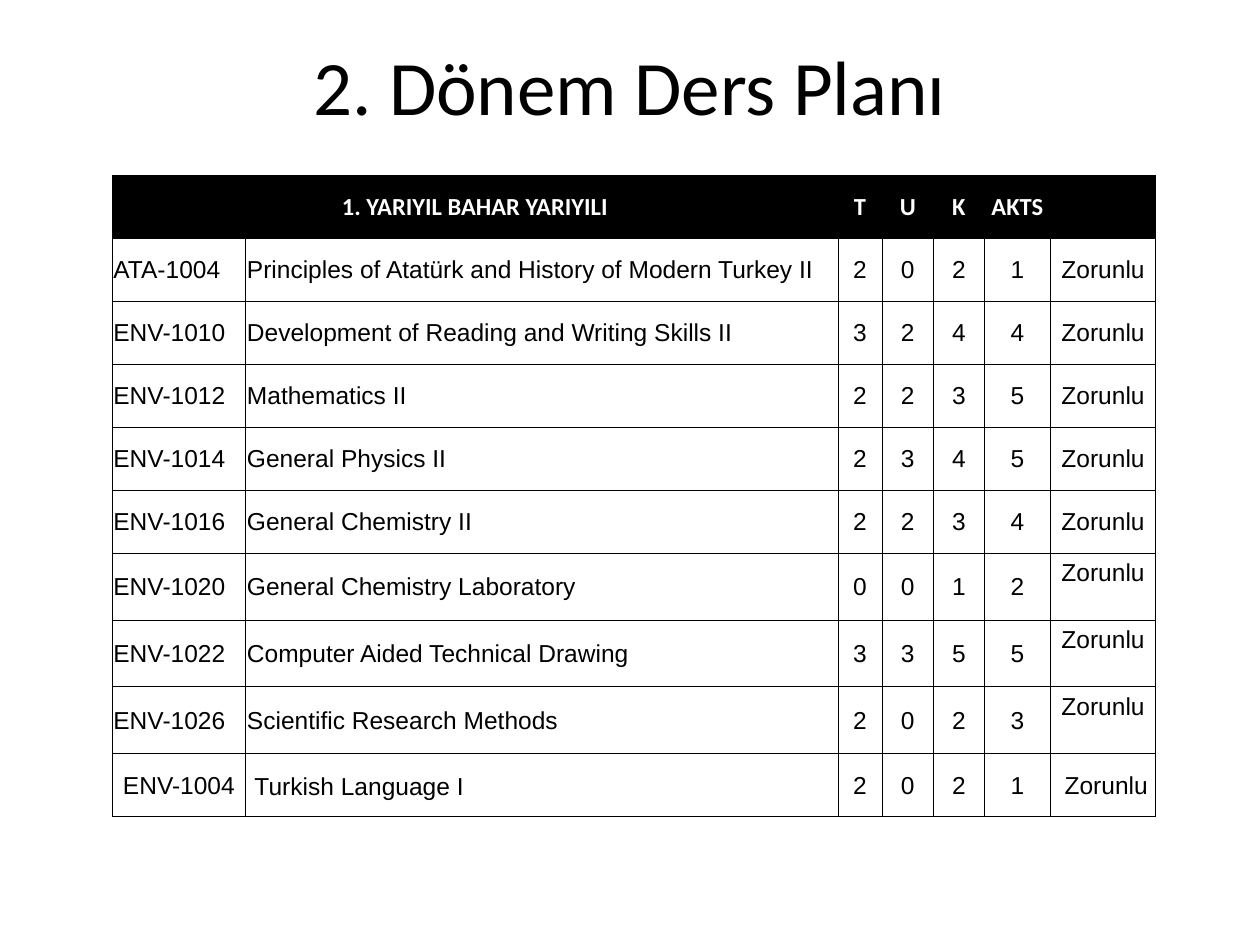
"""Build the second-term course plan slide."""
from dataclasses import astuple, dataclass

from lxml.etree import SubElement
from pptx import Presentation
from pptx.dml.color import RGBColor
from pptx.enum.text import MSO_ANCHOR, PP_ALIGN
from pptx.oxml.ns import qn
from pptx.slide import Slide
from pptx.table import Table, _Cell
from pptx.text.text import TextFrame
from pptx.util import Inches, Pt

BLACK = RGBColor(0, 0, 0)
WHITE = RGBColor(255, 255, 255)
COLUMN_WIDTHS = (1.06, 4.7, 0.35, 0.41, 0.4, 0.53, 0.83)
HEADINGS = ("1. YARIYIL BAHAR YARIYILI", "", "T", "U", "K", "AKTS", "")
ROW_HEIGHT, TALL_ROW_HEIGHT = 0.5, 0.53
INSET = 0.01
TALL_ROWS = range(6, 9)


@dataclass(frozen=True)
class Course:
    code: str
    name: str
    theory: int
    practice: int
    credit: int
    akts: int
    status: str = "Zorunlu"


COURSES = (
    Course("ATA-1004", "Principles of Atatürk and History of Modern Turkey II", 2, 0, 2, 1),
    Course("ENV-1010", "Development of Reading and Writing Skills II", 3, 2, 4, 4),
    Course("ENV-1012", "Mathematics II", 2, 2, 3, 5),
    Course("ENV-1014", "General Physics II", 2, 3, 4, 5),
    Course("ENV-1016", "General Chemistry II", 2, 2, 3, 4),
    Course("ENV-1020", "General Chemistry Laboratory", 0, 0, 1, 2),
    Course("ENV-1022", "Computer Aided Technical Drawing", 3, 3, 5, 5),
    Course("ENV-1026", "Scientific Research Methods", 2, 0, 2, 3),
    Course("ENV-1004", "Turkish Language I", 2, 0, 2, 1),
)


def write(frame: TextFrame, text: str, font: str, size: float, color: RGBColor,
          align: PP_ALIGN, bold: bool = False) -> None:
    frame.text = text
    paragraph = frame.paragraphs[0]
    paragraph.alignment = align
    for run in paragraph.runs:
        run.font.name = font
        run.font.size = Pt(size)
        run.font.bold = bold
        run.font.color.rgb = color


def add_borders(cell: _Cell) -> None:
    properties = cell._tc.get_or_add_tcPr()
    for side in ("a:lnL", "a:lnR", "a:lnT", "a:lnB"):
        line = SubElement(properties, qn(side), w=str(Pt(0.5)))
        fill = SubElement(line, qn("a:solidFill"))
        SubElement(fill, qn("a:srgbClr"), val=str(BLACK))


def style_cell(cell: _Cell, fill: RGBColor | None) -> None:
    add_borders(cell)
    if fill is None:
        cell.fill.background()
    else:
        cell.fill.solid()
        cell.fill.fore_color.rgb = fill
    cell.vertical_anchor = MSO_ANCHOR.MIDDLE
    cell.margin_left = cell.margin_right = cell.margin_top = Inches(INSET)
    cell.margin_bottom = Inches(0)


def fill_header(table: Table) -> None:
    for column, heading in enumerate(HEADINGS):
        cell = table.cell(0, column)
        style_cell(cell, BLACK)
        write(cell.text_frame, heading, "Calibri", 14, WHITE, PP_ALIGN.CENTER, True)
    table.cell(0, 0).merge(table.cell(0, 1))


def fill_course(table: Table, row: int, course: Course) -> None:
    is_last = row == len(COURSES)
    for column, value in enumerate(astuple(course)):
        cell = table.cell(row, column)
        style_cell(cell, None)
        is_left = column == 1 or (column == 0 and not is_last)
        align = PP_ALIGN.LEFT if is_left else PP_ALIGN.CENTER
        write(cell.text_frame, str(value), "Arial", 14, BLACK, align)
    status = table.cell(row, len(COLUMN_WIDTHS) - 1)
    if row in TALL_ROWS:
        status.margin_bottom = Inches(0.22)
    if is_last:
        status.margin_left = Inches(0.06)
        name = table.cell(row, 1)
        name.margin_left = Inches(0.07)
        name.margin_top = Inches(0.04)


def add_title(slide: Slide) -> None:
    title = slide.shapes.add_textbox(Inches(0.5), Inches(0.05), Inches(9), Inches(1.25))
    title.text_frame.word_wrap = True
    title.text_frame.vertical_anchor = MSO_ANCHOR.MIDDLE
    write(title.text_frame, "2. Dönem Ders Planı", "Calibri", 44, BLACK, PP_ALIGN.CENTER)


def add_course_plan(slide: Slide) -> None:
    table = slide.shapes.add_table(
        len(COURSES) + 1, len(COLUMN_WIDTHS),
        Inches(0.89), Inches(1.39), Inches(8.28), Inches(5.12)).table
    table.horz_banding = False
    for column, width in zip(table.columns, COLUMN_WIDTHS):
        column.width = Inches(width)
    for index, row in enumerate(table.rows):
        row.height = Inches(TALL_ROW_HEIGHT if index in TALL_ROWS else ROW_HEIGHT)
    fill_header(table)
    for row, course in enumerate(COURSES, start=1):
        fill_course(table, row, course)


def main() -> None:
    presentation = Presentation()
    presentation.slide_width, presentation.slide_height = Inches(10), Inches(7.5)
    slide = presentation.slides.add_slide(presentation.slide_layouts[6])
    add_title(slide)
    add_course_plan(slide)
    presentation.save("out.pptx")


if __name__ == "__main__":
    main()
